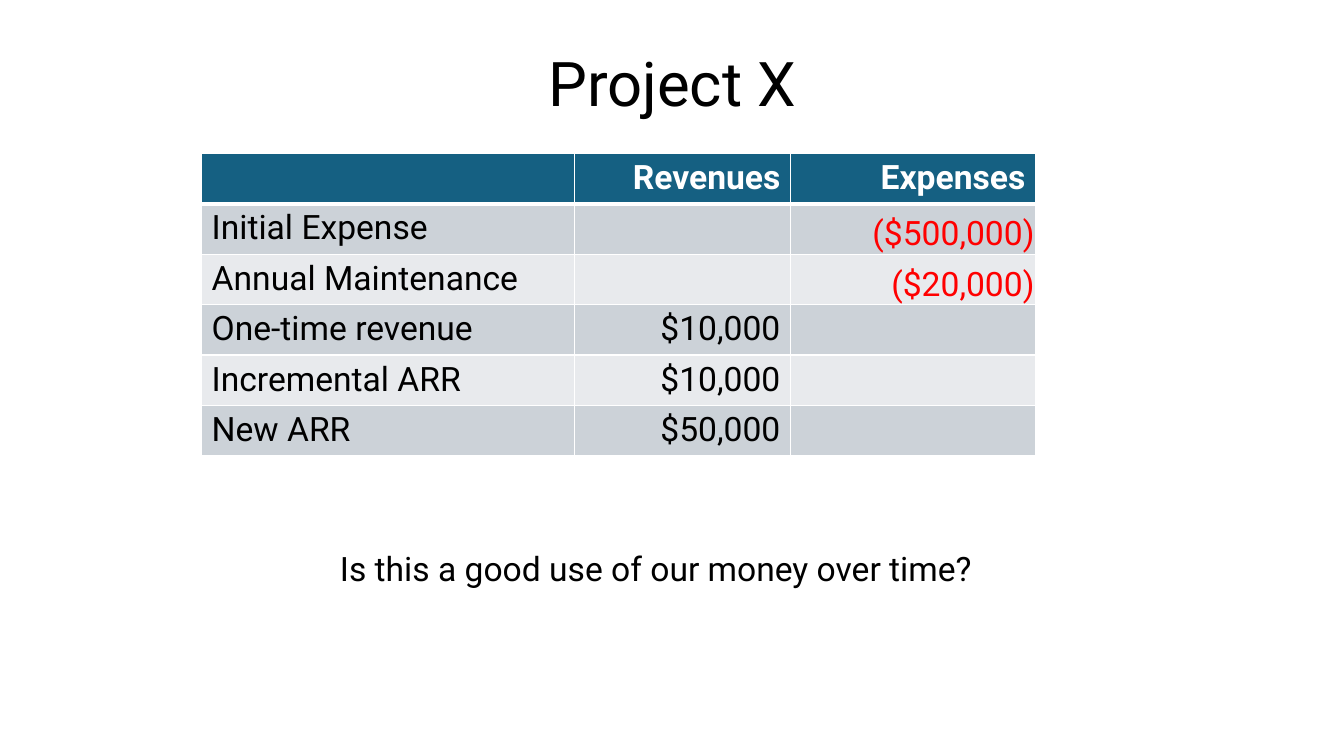
from pptx import Presentation
from pptx.dml.color import RGBColor
from pptx.enum.text import MSO_ANCHOR, PP_ALIGN
from pptx.oxml.ns import qn
from pptx.util import Inches, Pt
from lxml import etree

LEFT, CENTER, RIGHT = PP_ALIGN.LEFT, PP_ALIGN.CENTER, PP_ALIGN.RIGHT
TOP, MIDDLE, BOTTOM = MSO_ANCHOR.TOP, MSO_ANCHOR.MIDDLE, MSO_ANCHOR.BOTTOM
BLACK, WHITE, RED = "000000", "FFFFFF", "FF0000"
HEADER_FILL, DARK_BAND, LIGHT_BAND = "156082", "CCD2D8", "E8EAED"


def color(hex_string):
    return RGBColor.from_string(hex_string)


def write(frame, text, size, text_color, align, bold=False):
    para = frame.paragraphs[0]
    para.alignment = align
    span = para.add_run()
    span.text = text
    span.font.name = "Roboto"
    span.font.size = Pt(size)
    span.font.bold = bold
    span.font.color.rgb = color(text_color)


deck = Presentation()
deck.slide_width, deck.slide_height = Inches(13.33), Inches(7.5)
page = deck.slides.add_slide(deck.slide_layouts[6])

# Title and closing question
text_boxes = [
    ("Project X", 44, MIDDLE, 0.9, (0.92, 0.4, 11.5, 0.91)),
    ("Is this a good use of our money over time?", 24, TOP, 1.0, (2.58, 5.39, 7.85, 0.5)),
]
for text, size, anchor, line_spacing, place in text_boxes:
    box = page.shapes.add_textbox(*[Inches(length) for length in place])
    box.text_frame.word_wrap = True
    box.text_frame.vertical_anchor = anchor
    write(box.text_frame, text, size, BLACK, CENTER)
    box.text_frame.paragraphs[0].line_spacing = line_spacing

# Table of revenues and expenses
budget = [
    ("", "Revenues", "Expenses"),
    ("Initial Expense", "", "($500,000)"),
    ("Annual Maintenance", "", "($20,000)"),
    ("One-time revenue", "$10,000", ""),
    ("Incremental ARR", "$10,000", ""),
    ("New ARR", "$50,000", ""),
]
column_widths = [3.7, 2.14, 2.43]
row_height = 0.49
table = page.shapes.add_table(
    len(budget), len(column_widths), Inches(2), Inches(1.52),
    Inches(sum(column_widths)), Inches(row_height * len(budget))).table
for column, width in zip(table.columns, column_widths):
    column.width = Inches(width)

for row_index, entries in enumerate(budget):
    table.rows[row_index].height = Inches(row_height)
    is_header = row_index == 0
    band = HEADER_FILL if is_header else (LIGHT_BAND, DARK_BAND)[row_index % 2]
    for column_index, text in enumerate(entries):
        cell = table.cell(row_index, column_index)

        # White borders, with a thicker rule under the header
        cell_properties = cell._tc.get_or_add_tcPr()
        for side in ("lnL", "lnR", "lnT", "lnB"):
            under_header = (row_index, side) in ((0, "lnB"), (1, "lnT"))
            line = etree.SubElement(cell_properties, qn(f"a:{side}"),
                                    w=str(Pt(3 if under_header else 1)))
            line_fill = etree.SubElement(line, qn("a:solidFill"))
            etree.SubElement(line_fill, qn("a:srgbClr"), val=WHITE)
        cell.fill.solid()
        cell.fill.fore_color.rgb = color(band)

        # Cell text: expenses are red and sit in the bottom corner
        if not text:
            continue
        is_expense = column_index == 2 and not is_header
        if is_expense:
            cell.vertical_anchor = BOTTOM
            cell.margin_left = cell.margin_right = cell.margin_top = Inches(0.01)
            cell.margin_bottom = Inches(0)
        text_color = WHITE if is_header else RED if is_expense else BLACK
        align = RIGHT if column_index else LEFT
        write(cell.text_frame, text, 24, text_color, align, bold=is_header)

deck.save("out.pptx")
